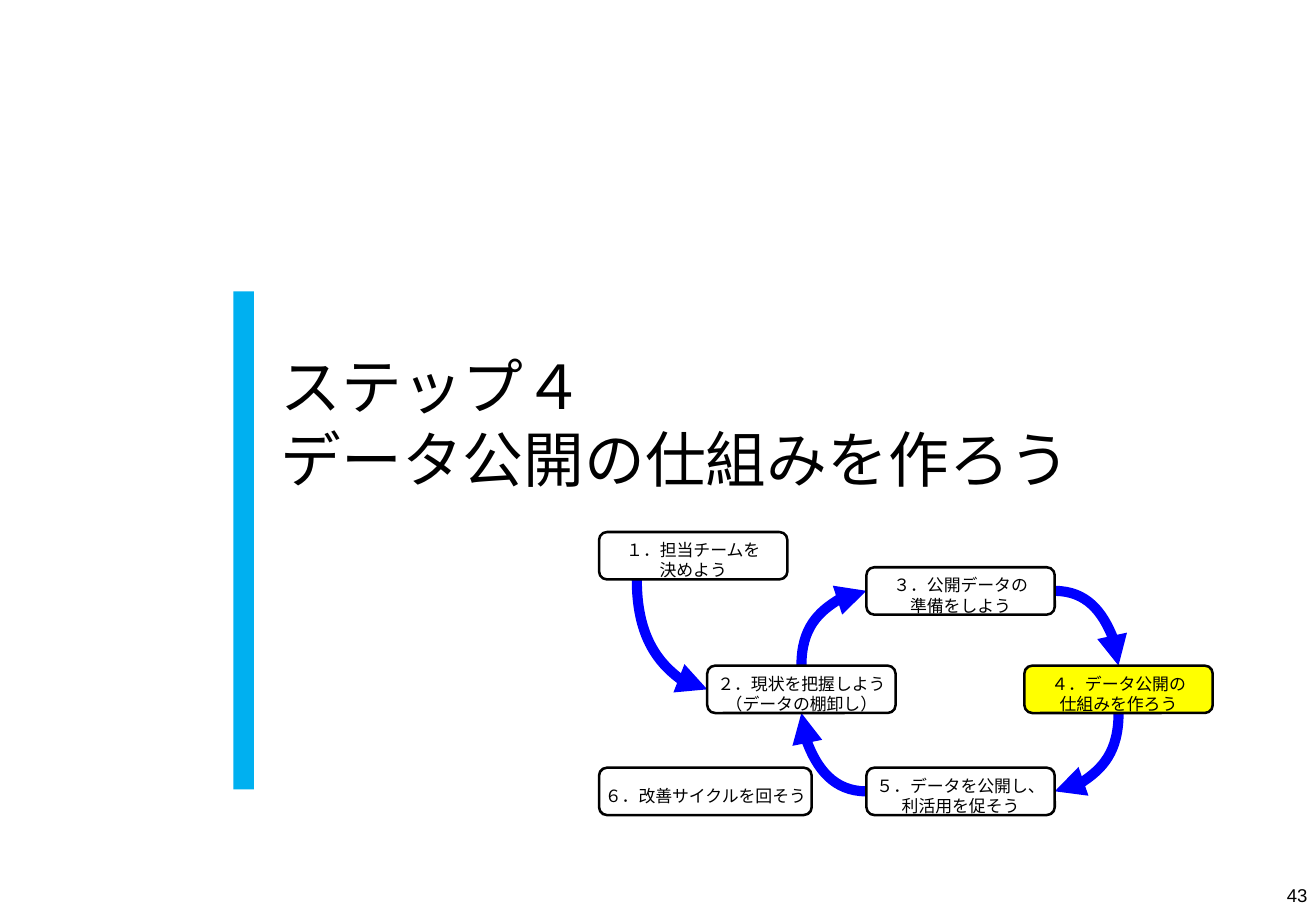
from dataclasses import dataclass

from lxml import etree
from pptx import Presentation
from pptx import util as u
from pptx.dml.color import RGBColor
from pptx.enum import shapes, text
from pptx.oxml import ns


@dataclass(frozen=True)
class Theme:
    ink: str = "000000"
    paper: str = "FFFFFF"
    accent: str = "00B0F0"
    arrow: str = "0000FF"
    current: str = "FFFF00"
    japanese: str = "Noto Sans CJK JP"
    latin: str = "Arial"
    title_size: int = 36
    step_size: int = 10
    number_size: int = 11
    outline: float = 1.5
    arrow_width: int = 6


@dataclass(frozen=True)
class Step:
    left: float
    top: float
    label: str
    width: float = 1.55
    height: float = 0.39

    def point(self, across, down):
        """Point at the given fractions of the box's width and height."""
        return self.left + across * self.width, self.top + down * self.height


THEME = Theme()
CURRENT_STEP = 4
STEPS = {
    1: Step(4.93, 4.38, "１．担当チームを\n決めよう"),
    2: Step(5.82, 5.48, "２．現状を把握しよう\n（データの棚卸し）"),
    3: Step(7.13, 4.67, "３．公開データの\n準備をしよう"),
    4: Step(8.43, 5.48, "４．データ公開の\n仕組みを作ろう"),
    5: Step(7.13, 6.32, "５．データを公開し、\n利活用を促そう"),
    6: Step(4.93, 6.32, "６．改善サイクルを回そう", width=1.75),
}
# Fractions of a box at which arrows attach
TOP, BOTTOM, LEFT, RIGHT = (0.5, 0), (0.5, 1), (0, 0.5), (1, 0.5)
BOTTOM_LEFT = (0.2, 1)
# from step, attachment, to step, attachment
FLOW = [
    (1, BOTTOM_LEFT, 2, LEFT),
    (2, TOP, 3, LEFT),
    (5, LEFT, 2, BOTTOM),
    (3, RIGHT, 4, TOP),
    (4, BOTTOM, 5, RIGHT),
]


def write(shape, words, *, size, font, align, anchor, insets, wrap=True):
    frame = shape.text_frame
    frame.text = words
    frame.word_wrap = wrap
    frame.auto_size = text.MSO_AUTO_SIZE.NONE
    frame.vertical_anchor = anchor
    (frame.margin_left, frame.margin_top,
     frame.margin_right, frame.margin_bottom) = map(u.Inches, insets)
    for paragraph in frame.paragraphs:
        paragraph.alignment = align
        for run in paragraph.runs:
            run.font.size = u.Pt(size)
            run.font.color.rgb = RGBColor.from_string(THEME.ink)
            run.font.name = font
            east_asian = etree.SubElement(run.font._element, ns.qn("a:ea"))
            east_asian.set("typeface", font)


def add_box(slide, kind, left, top, width, height, fill):
    box = slide.shapes.add_shape(kind, *map(u.Inches, (left, top, width, height)))
    box.shadow.inherit = False
    box.fill.solid()
    box.fill.fore_color.rgb = RGBColor.from_string(fill)
    box.line.fill.background()
    return box


def add_step(slide, step, fill):
    box = add_box(slide, shapes.MSO_SHAPE.ROUNDED_RECTANGLE,
                  step.left, step.top, step.width, step.height, fill)
    box.line.color.rgb = RGBColor.from_string(THEME.ink)
    box.line.width = u.Pt(THEME.outline)
    write(box, step.label, size=THEME.step_size, font=THEME.japanese,
          align=text.PP_ALIGN.CENTER, anchor=text.MSO_ANCHOR.MIDDLE,
          insets=(0.1, 0.12, 0.1, 0.05), wrap=False)


def add_curved_arrow(slide, start, end, vertical_first):
    """Quarter-turn arrow that leaves its start vertically or horizontally."""
    dx, dy = end[0] - start[0], end[1] - start[1]
    width, height = abs(dx), abs(dy)
    if vertical_first:
        width, height = height, width
        turn = 270 if dx * dy > 0 else 90
        flip_h, flip_v = dx > 0, dy < 0
    else:
        turn = 180 if dx < 0 else 0
        flip_h, flip_v = False, dx * dy < 0
    left = (start[0] + end[0] - width) / 2
    top = (start[1] + end[1] - height) / 2
    arrow = slide.shapes.add_connector(
        shapes.MSO_CONNECTOR.CURVE,
        *map(u.Inches, (left, top, left + width, top + height)))
    arrow.line.color.rgb = RGBColor.from_string(THEME.arrow)
    arrow.line.width = u.Pt(THEME.arrow_width)

    # Bend, turn, arrowhead and no shadow
    properties = arrow._element.spPr
    properties.find(ns.qn("a:prstGeom")).set("prst", "curvedConnector2")
    frame = properties.find(ns.qn("a:xfrm"))
    frame.set("rot", str(turn * 60000))
    frame.set("flipH", str(int(flip_h)))
    frame.set("flipV", str(int(flip_v)))
    head = etree.SubElement(properties.find(ns.qn("a:ln")), ns.qn("a:tailEnd"))
    head.set("type", "triangle")
    etree.SubElement(properties, ns.qn("a:effectLst"))


def add_title(slide, words):
    title = slide.shapes.title
    title.left, title.top = u.Inches(2.31), u.Inches(2.43)
    title.width, title.height = u.Inches(7.75), u.Inches(2.09)
    write(title, words, size=THEME.title_size, font=THEME.japanese,
          align=text.PP_ALIGN.LEFT, anchor=text.MSO_ANCHOR.MIDDLE,
          insets=(0, 0, 0, 0))


def add_page_number(slide, number):
    box = slide.shapes.add_textbox(*map(u.Inches, (10.39, 7.22, 0.44, 0.28)))
    write(box, number, size=THEME.number_size, font=THEME.latin,
          align=text.PP_ALIGN.RIGHT, anchor=text.MSO_ANCHOR.BOTTOM,
          insets=(0.07, 0.04, 0.07, 0.04))


def main():
    deck = Presentation()
    deck.slide_width, deck.slide_height = u.Inches(10.83), u.Inches(7.5)
    slide = deck.slides.add_slide(deck.slide_layouts.get_by_name("Title Only"))

    # Section heading
    add_box(slide, shapes.MSO_SHAPE.RECTANGLE, 1.92, 2.4, 0.17, 4.1, THEME.accent)
    add_title(slide, "ステップ４\vデータ公開の仕組みを作ろう")
    add_page_number(slide, "43")

    # Step cycle, arrows beneath the boxes
    for source, leaving, target, arriving in FLOW:
        add_curved_arrow(slide, STEPS[source].point(*leaving),
                         STEPS[target].point(*arriving),
                         vertical_first=leaving not in (LEFT, RIGHT))
    for number, step in STEPS.items():
        add_step(slide, step, THEME.current if number == CURRENT_STEP else THEME.paper)

    deck.save("out.pptx")


if __name__ == "__main__":
    main()
